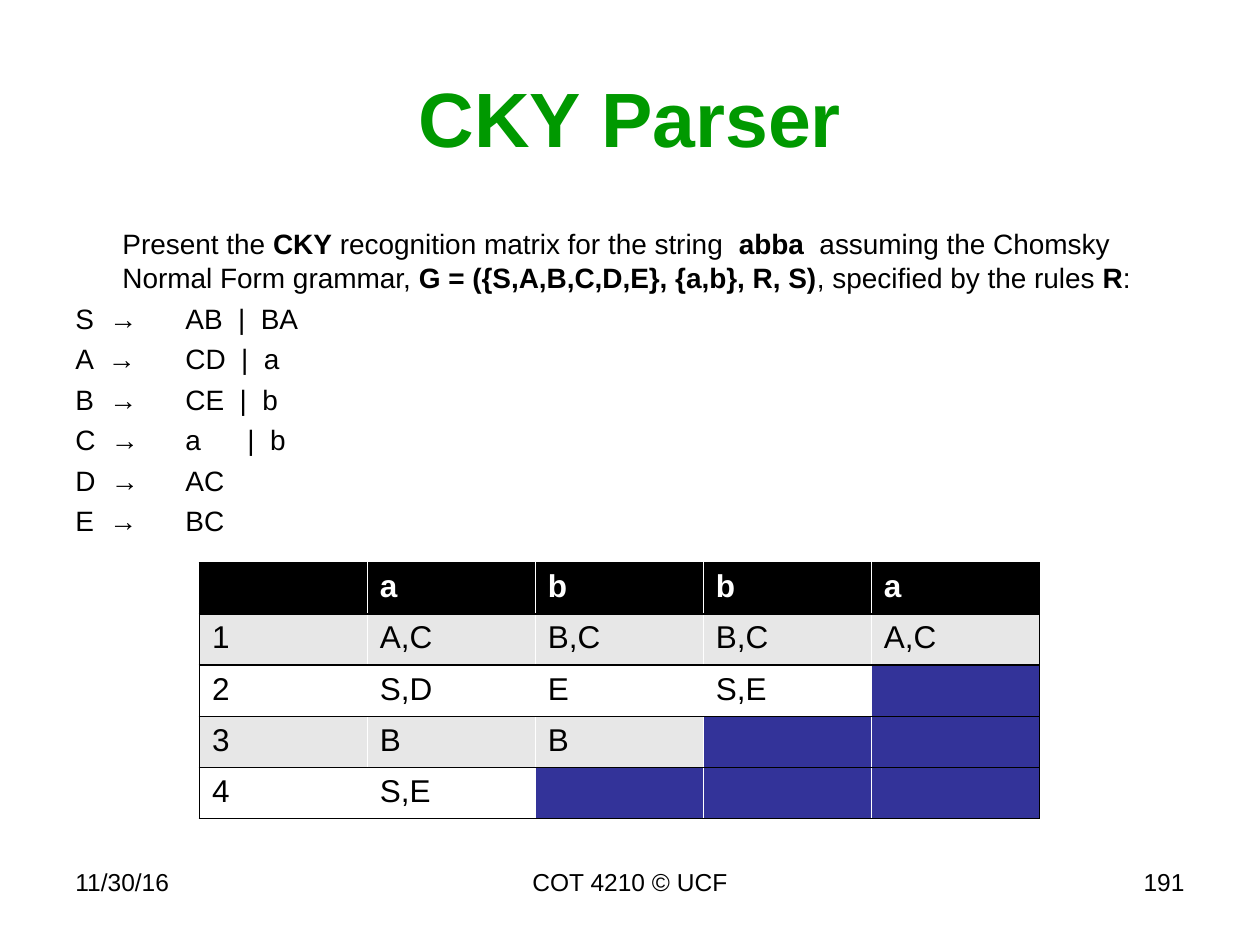
from dataclasses import dataclass

from pptx import Presentation
from pptx import util as u
from pptx.dml.color import RGBColor as Rgb
from pptx.enum import text as t
from pptx.oxml import parse_xml
from pptx.oxml.ns import nsdecls


@dataclass(frozen=True)
class Theme:
    font: str = "Arial"
    ink: str = "000000"
    paper: str = "FFFFFF"
    title: str = "009900"
    band: str = "E7E7E7"
    unused: str = "333399"
    head_pt: int = 44
    body_pt: int = 16
    cell_pt: int = 18
    foot_pt: int = 14


@dataclass(frozen=True)
class Box:
    left: float
    top: float
    width: float
    height: float

    def cm(self) -> tuple:
        return tuple(map(u.Cm, (self.left, self.top, self.width, self.height)))


@dataclass(frozen=True)
class Foot:
    words: str
    box: Box
    align: t.PP_ALIGN


LOOK = Theme()
TITLE = Box(1.27, 0.76, 22.86, 3.18)
BODY = Box(1.27, 4.45, 22.86, 12.57)
GRID = Box(4.02, 11.35, 16.93, 5.15)
INDENT = 0.95

# Every second piece is bold.
TASK = [
    "\tPresent the ", "CKY", " recognition matrix for the string  ", "abba  ",
    "assuming the Chomsky Normal Form grammar, ",
    "G = ({S,A,B,C,D,E}, {a,b}, R, S)", ", specified by the rules ", "R", ":",
]
RULES = [
    "S  →\tAB  |  BA", "A  →\tCD  |  a", "B  → \tCE  |  b",
    "C  → \ta      |  b", "D  →\tAC", "E  → \tBC",
]
MATRIX = [
    ["", "a", "b", "b", "a"],
    ["1", "A,C", "B,C", "B,C", "A,C"],
    ["2", "S,D", "E", "S,E"],
    ["3", "B", "B"],
    ["4", "S,E"],
]
FEET = [
    Foot("11/30/16", Box(1.27, 17.35, 5.93, 1.32), t.PP_ALIGN.LEFT),
    Foot("COT 4210 © UCF", Box(8.68, 17.35, 8.04, 1.32), t.PP_ALIGN.CENTER),
    Foot("191", Box(18.2, 17.35, 5.93, 1.32), t.PP_ALIGN.RIGHT),
]


def style(para, size: int, color: str = LOOK.ink, bold: bool = False) -> None:
    font = para.font
    font.name, font.size, font.bold = LOOK.font, u.Pt(size), bold
    font.color.rgb = Rgb.from_string(color)


def add_box(slide, box: Box):
    frame = slide.shapes.add_textbox(*box.cm()).text_frame
    frame.word_wrap = True
    return frame


def add_title(slide) -> None:
    shape = slide.shapes.title
    shape.left, shape.top, shape.width, shape.height = TITLE.cm()
    frame = shape.text_frame
    frame.text = "CKY Parser"
    frame.vertical_anchor = t.MSO_ANCHOR.MIDDLE
    para = frame.paragraphs[0]
    para.alignment = t.PP_ALIGN.CENTER
    style(para, LOOK.head_pt, LOOK.title, True)


def add_body(slide) -> None:
    frame = add_box(slide, BODY)
    frame.text = "\n".join(["", *RULES])
    task, *rules = frame.paragraphs
    for n, words in enumerate(TASK):
        run = task.add_run()
        run.text = words
        run.font.bold = n % 2 == 1
    for para in frame.paragraphs:
        style(para, LOOK.body_pt, bold=para in rules)
        para.space_before = u.Pt(4)
        props = para._p.get_or_add_pPr()
        props.set("marL", str(u.Cm(INDENT)))
        props.set("indent", str(u.Cm(-INDENT)))


def add_edges(cell, sides: str) -> None:
    """Rule the given sides (letters of LRTB, in that order)."""
    props = cell._tc.get_or_add_tcPr()
    for n, side in enumerate(sides):
        props.insert(n, parse_xml(
            f'<a:ln{side} {nsdecls("a")} w="12700"><a:solidFill>'
            f'<a:srgbClr val="{LOOK.ink}"/></a:solidFill></a:ln{side}>'))


def add_matrix(slide) -> None:
    size = len(MATRIX)
    table = slide.shapes.add_table(size, size, *GRID.cm()).table
    for r, row in enumerate(MATRIX):
        for c in range(size):
            cell = table.cell(r, c)
            cell.text = row[c] if c < len(row) else ""
            if r == 0:
                fill = LOOK.ink
            elif c >= len(row):
                fill = LOOK.unused
            else:
                fill = LOOK.band if r % 2 else LOOK.paper
            cell.fill.solid()
            cell.fill.fore_color.rgb = Rgb.from_string(fill)
            style(cell.text_frame.paragraphs[0], LOOK.cell_pt,
                  LOOK.ink if r else LOOK.paper, r == 0)
            add_edges(cell, {0: "L", size - 1: "R"}.get(c, "") + "TB")


def add_foot(slide, foot: Foot) -> None:
    frame = add_box(slide, foot.box)
    frame.text = foot.words
    para = frame.paragraphs[0]
    para.alignment = foot.align
    style(para, LOOK.foot_pt)


def main() -> None:
    deck = Presentation()
    deck.slide_width, deck.slide_height = u.Cm(25.4), u.Cm(19.05)
    slide = deck.slides.add_slide(deck.slide_layouts[5])
    add_title(slide)
    add_body(slide)
    for foot in FEET:
        add_foot(slide, foot)
    add_matrix(slide)
    deck.save("out.pptx")


if __name__ == "__main__":
    main()
